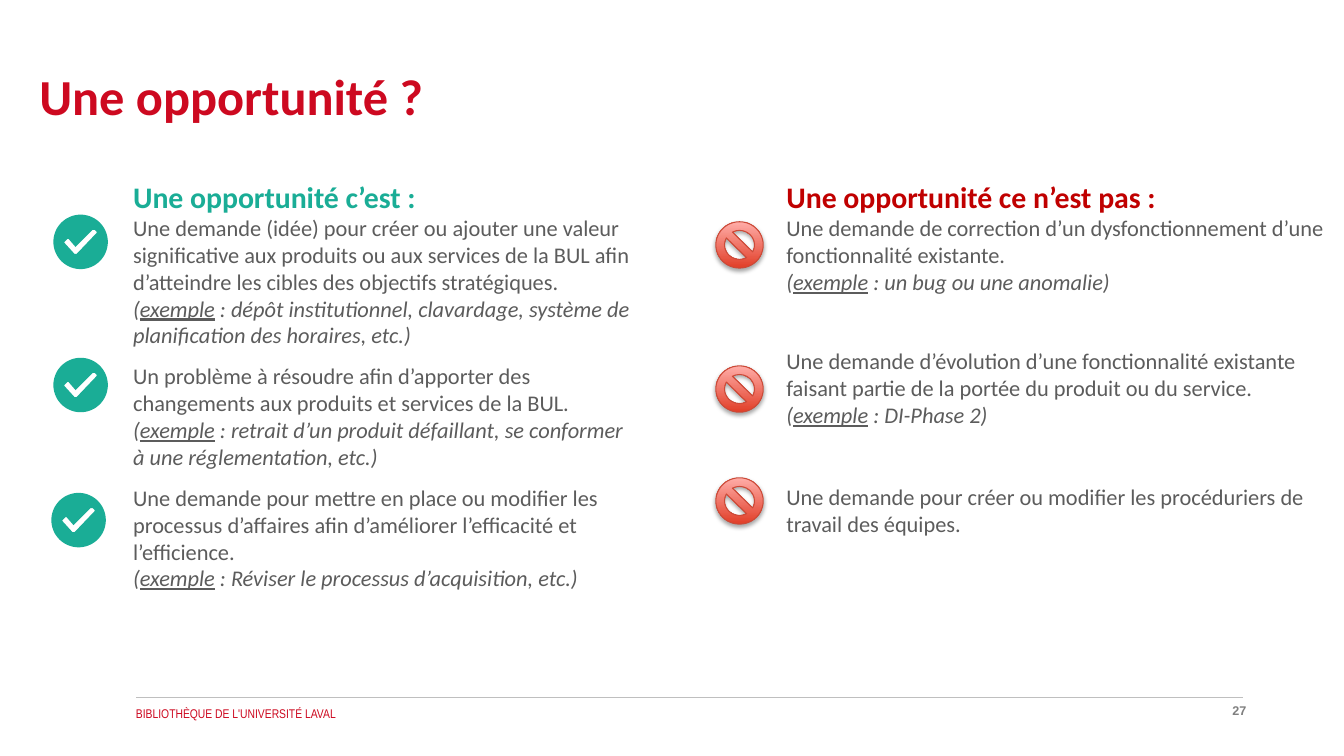
from copy import deepcopy
from math import cos, pi, sin
from lxml.etree import SubElement
from pptx import Presentation
from pptx.dml.color import RGBColor
from pptx.enum.shapes import MSO_CONNECTOR as LINE, MSO_SHAPE as SHAPE
from pptx.enum.text import MSO_ANCHOR as ANCHOR, MSO_AUTO_SIZE as FIT, PP_ALIGN as ALIGN
from pptx.oxml.ns import qn
from pptx.util import Inches, Pt

RED, GREEN, GRAY = "CD0920", "1AAD96", "5C5C5C"
TITLE = "Une opportunité ?"
FOOT = [
    ("BIBLIOTHÈQUE DE L'UNIVERSITÉ LAVAL", (1.25, 6.95, 8.05, 0.25), "Arial Narrow", RED, False, ALIGN.LEFT),
    ("27", (11.07, 6.92, 1.39, 0.25), "Arial", "808080", True, ALIGN.RIGHT),
]
COLUMNS = [
    ("Une opportunité c’est :", GREEN, (1.32, 1.77, 4.98, 4.14), [
        ("Une demande (idée) pour créer ou ajouter une valeur significative aux produits ou aux services "
         "de la BUL afin d’atteindre les cibles des objectifs stratégiques. ", True,
         "dépôt institutionnel, clavardage, système de planification des horaires, etc.", 10),
        ("Un problème à résoudre afin d’apporter des changements aux produits et services de la BUL. ", False,
         "retrait d’un produit défaillant, se conformer à une réglementation, etc.", 10),
        ("Une demande pour mettre en place ou modifier les processus d’affaires afin d’améliorer "
         "l’efficacité et l’efficience.", True, "Réviser le processus d’acquisition, etc.", 10),
    ]),
    ("Une opportunité ce n’est pas :", "C00000", (7.8, 1.77, 5.53, 4.4), [
        ("Une demande de correction d’un dysfonctionnement d’une fonctionnalité existante.", True,
         "un bug ou une anomalie", 37.5),
        ("Une demande d’évolution d’une fonctionnalité existante faisant partie de la portée du produit "
         "ou du service.", True, "DI-Phase 2", 39.5),
        ("Une demande pour créer ou modifier les procéduriers de travail des équipes.", False, "", 10),
    ]),
]
CHECKS = [(0.8, 2.4), (0.8, 3.82), (0.78, 5.16)]
RADIUS = 0.27
TICK = [(0.13, -0.12), (0.12, -0.12), (-0.05, 0.05), (-0.12, -0.03), (-0.13, -0.03), (-0.16, 0),
        (-0.16, 0.01), (-0.06, 0.12), (-0.04, 0.12), (0.16, -0.09), (0.16, -0.1), (0.14, -0.12)]
BANS = [2.2, 3.63, 4.74]


def color(code):
    return RGBColor.from_string(code)


def style(font, size, name, code, bold=False):
    font.size, font.name, font.bold = Pt(size), name, bold
    font.color.rgb = color(code)


def add_box(place):
    frame = slide.shapes.add_textbox(*map(Inches, place)).text_frame
    frame.word_wrap = True
    return frame


def trim(frame):
    frame.margin_left = frame.margin_top = frame.margin_right = frame.margin_bottom = 0


def add_run(para, text, size=16, code=GRAY, bold=False, slant=False, under=False, cut=False):
    run = para.add_run()
    run.text = text
    style(run.font, size, "Calibri", code, bold)
    run.font.italic, run.font.underline = slant, under
    if cut:
        para.add_line_break()
        para._p[-1].append(deepcopy(run._r.get_or_add_rPr()))


def add_column(head, code, place, items):
    frame = add_box(place)
    trim(frame)
    for i, (text, cut, case, gap) in enumerate(items):
        para = frame.add_paragraph() if i else frame.paragraphs[0]
        para.space_after = Pt(gap)
        if i == 0:
            add_run(para, head, 21.3, code, bold=True, cut=True)
        add_run(para, text, cut=cut)
        if case:
            add_run(para, "(", slant=True)
            add_run(para, "exemple", slant=True, under=True)
            add_run(para, f" : {case})", slant=True)


def add_check(x, y):
    turns = [2 * pi * i / 72 for i in range(72)]
    disc = [(RADIUS * cos(t), RADIUS * sin(t)) for t in turns]
    rings = [[(Inches(x + dx), Inches(y + dy)) for dx, dy in ring] for ring in (disc, TICK)]
    pen = slide.shapes.build_freeform(*rings[0][0])
    for ring in rings:
        pen.move_to(*ring[0])
        pen.add_line_segments(ring[1:], close=True)
    check = pen.convert_to_shape()
    check.shadow.inherit = False
    check.fill.solid()
    check.fill.fore_color.rgb = color(GREEN)
    check.line.fill.background()


def add_ban(top):
    ban = slide.shapes.add_shape(SHAPE.NO_SYMBOL, *map(Inches, (7.1, top, 0.47, 0.46)))
    ban.fill.gradient()
    ban.fill.gradient_angle = 90
    for stop, code in zip(ban.fill.gradient_stops, ("E13E28", "FFADA8")):
        stop.color.rgb = color(code)
    ban.line.color.rgb = color("CB4A38")
    ban.line.width = Pt(0.75)
    ban.shadow.inherit = False
    glow = SubElement(ban._element.spPr.find(qn("a:effectLst")), qn("a:outerShdw"),
                      blurRad=str(Pt(3.1)), dist=str(Pt(1.8)), dir="5400000", rotWithShape="0")
    tone = SubElement(glow, qn("a:srgbClr"), val="000000")
    SubElement(tone, qn("a:alpha"), val="35000")


deck = Presentation()
deck.slide_width, deck.slide_height = Inches(13.33), Inches(7.5)
slide = deck.slides.add_slide(deck.slide_layouts[5])

title = slide.shapes.title
title.left, title.top, title.width, title.height = map(Inches, (0.39, 0.59, 12.2, 0.72))
frame = title.text_frame
frame.text = TITLE
frame.auto_size = FIT.NONE
frame.vertical_anchor = ANCHOR.MIDDLE
trim(frame)
frame.paragraphs[0].alignment = ALIGN.LEFT
style(frame.paragraphs[0].font, 36, "Calibri", RED, True)

for text, place, name, code, bold, align in FOOT:
    para = add_box(place).paragraphs[0]
    para.text, para.alignment = text, align
    style(para.font, 9, name, code, bold)

rule = slide.shapes.add_connector(LINE.STRAIGHT, *map(Inches, (1.35, 6.92, 12.33, 6.92)))
rule.line.color.rgb = color("BFBFBF")
rule.line.width = Pt(0.25)
SubElement(rule._element.spPr, qn("a:effectLst"))

for column in COLUMNS:
    add_column(*column)
for spot in CHECKS:
    add_check(*spot)
for top in BANS:
    add_ban(top)

deck.save("out.pptx")
